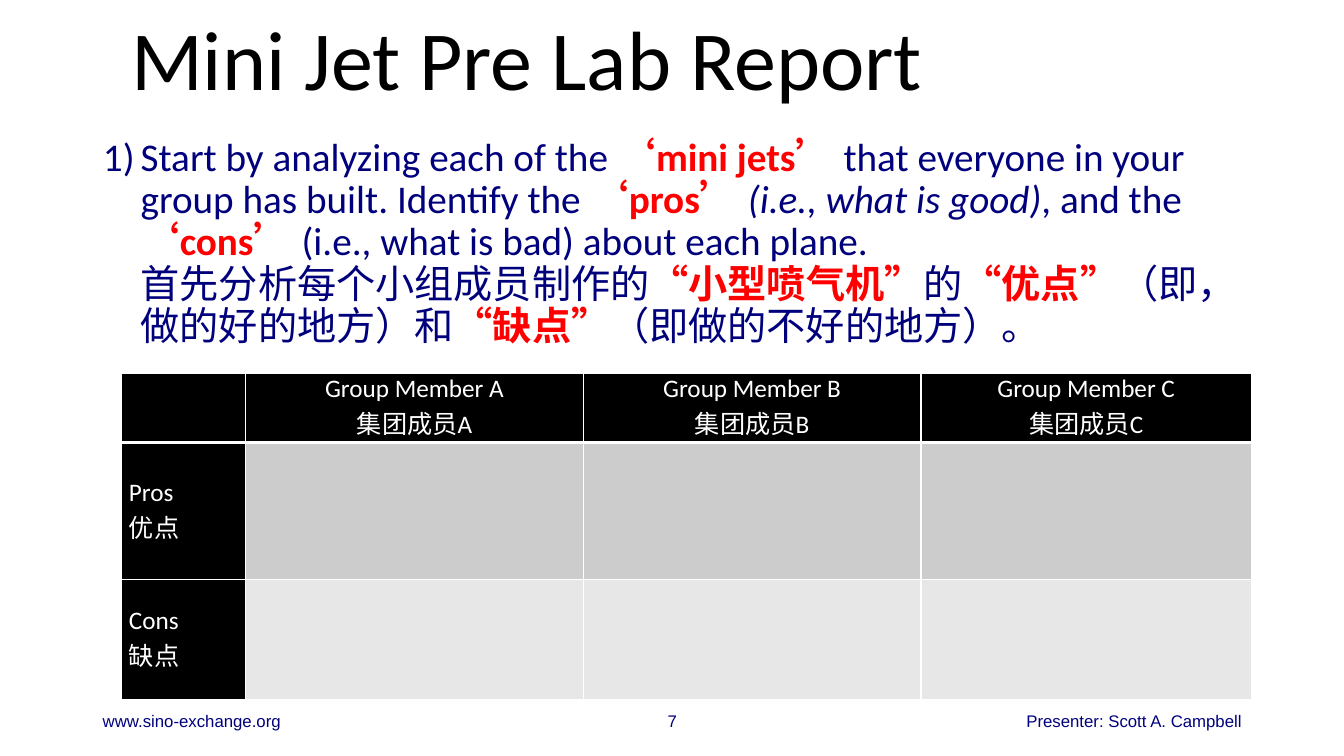
from lxml import etree
from pptx import Presentation
from pptx import util as u
from pptx.dml.color import RGBColor
from pptx.enum import text as t
from pptx.oxml import ns

HUE = {"navy": "00007D", "red": "FF0000", "black": "000000",
       "white": "FFFFFF", "mid": "CCCCCC", "pale": "E7E7E7"}


def write(par, words, size, hue, face="Calibri", bold=False, slant=False):
    """Add words to a paragraph, one run a line."""
    for i, line in enumerate(words.split("\n")):
        if i:
            par.add_line_break()
        run = par.add_run()
        run.text = line
        font = run.font
        font.size, font.name = u.Pt(size), face
        font.bold, font.italic = bold, slant
        font.color.rgb = RGBColor.from_string(HUE[hue])


def edge(cell, side, width):
    """Draw a white border on one side of a cell."""
    props = cell._tc.get_or_add_tcPr()
    line = etree.SubElement(props, ns.qn("a:ln" + side), w=str(u.Pt(width)))
    fill = etree.SubElement(line, ns.qn("a:solidFill"))
    etree.SubElement(fill, ns.qn("a:srgbClr"), val=HUE["white"])


deck = Presentation()
deck.slide_width, deck.slide_height = u.Cm(33.87), u.Cm(19.05)
slide = deck.slides.add_slide(deck.slide_layouts[1])

# Title
title = slide.shapes.title
title.left, title.top = u.Cm(3.05), u.Cm(0.43)
title.width, title.height = u.Cm(28.47), u.Cm(2.31)
frame = title.text_frame
frame.auto_size = t.MSO_AUTO_SIZE.NONE
frame.vertical_anchor = t.MSO_ANCHOR.MIDDLE
par = frame.paragraphs[0]
par.alignment, par.line_spacing = t.PP_ALIGN.LEFT, 0.9
write(par, "Mini Jet Pre Lab Report", 60, "black")

# Numbered task
body = slide.placeholders[1]
body.left, body.top = u.Cm(2.34), u.Cm(3.33)
body.width, body.height = u.Cm(29.21), u.Cm(6.07)
frame = body.text_frame
frame.auto_size = t.MSO_AUTO_SIZE.NONE
frame.vertical_anchor = t.MSO_ANCHOR.TOP
par = frame.paragraphs[0]
par.alignment, par.line_spacing, par.space_before = t.PP_ALIGN.LEFT, 0.9, u.Pt(0)
props = par._p.get_or_add_pPr()
props.set("marL", str(u.Cm(0.95)))
props.set("indent", str(-u.Cm(0.95)))
etree.SubElement(props, ns.qn("a:buFont"), typeface="+mj-lt")
etree.SubElement(props, ns.qn("a:buAutoNum"), type="arabicParenR")

task = [
    ("Start by analyzing each of the ", ""),
    ("‘mini jets’ ", "key"),
    ("that everyone in your group has built. Identify the ", ""),
    ("‘pros’ ", "key"),
    ("(i.e., what is good)", "slant"),
    (", and the ", ""),
    ("‘cons’ ", "key"),
    ("(i.e., what is bad) about each plane. \n首先分析每个小组成员制作的", ""),
    ("“小型喷气机”", "key"),
    ("的", ""),
    ("“优点”", "key"),
    ("（即，做的好的地方）和", ""),
    ("“缺点”", "key"),
    ("（即做的不好的地方）。", ""),
]
for words, style in task:
    key = style == "key"
    write(par, words, 28, "red" if key else "navy", bold=key, slant=style == "slant")

# Table of pros and cons
wide, high = [3.12, 8.51, 8.51, 8.33], [1.75, 3.45, 3.02]
heads = [""] + [f"Group Member {x}\n集团成员{x}" for x in "ABC"]
sides = ["", "Pros\n优点", "Cons\n缺点"]
shades = ["black", "mid", "pale"]
grid = slide.shapes.add_table(3, 4, u.Cm(3.07), u.Cm(9.4),
                              u.Cm(sum(wide)), u.Cm(sum(high))).table
for col, size in zip(grid.columns, wide):
    col.width = u.Cm(size)
for row, size in zip(grid.rows, high):
    row.height = u.Cm(size)
for r in range(3):
    for c in range(4):
        cell = grid.cell(r, c)
        for side in "LRTB":
            edge(cell, side, 3 if r == 0 and side == "B" else 1)
        cell.fill.solid()
        cell.fill.fore_color.rgb = RGBColor.from_string(HUE[shades[r] if c else "black"])
        cell.margin_left = cell.margin_right = u.Cm(0.18)
        cell.margin_top = cell.margin_bottom = 0
        words = heads[c] if r == 0 else sides[r] if c == 0 else ""
        if words:
            cell.vertical_anchor = t.MSO_ANCHOR.MIDDLE if r else t.MSO_ANCHOR.TOP
            par = cell.text_frame.paragraphs[0]
            par.alignment = t.PP_ALIGN.LEFT if r else t.PP_ALIGN.CENTER
            write(par, words, 18, "white")

# Footer
for left, width, side, words in [
    (2.34, 11.43, t.PP_ALIGN.LEFT, "www.sino-exchange.org"),
    (15.16, 3.56, t.PP_ALIGN.CENTER, "7"),
    (20.12, 11.43, t.PP_ALIGN.RIGHT, "Presenter: Scott A. Campbell"),
]:
    frame = slide.shapes.add_textbox(u.Cm(left), u.Cm(17.65),
                                     u.Cm(width), u.Cm(1.02)).text_frame
    frame.word_wrap = True
    frame.vertical_anchor = t.MSO_ANCHOR.MIDDLE
    par = frame.paragraphs[0]
    par.alignment = side
    write(par, words, 12, "navy", "Arial")

deck.save("out.pptx")
